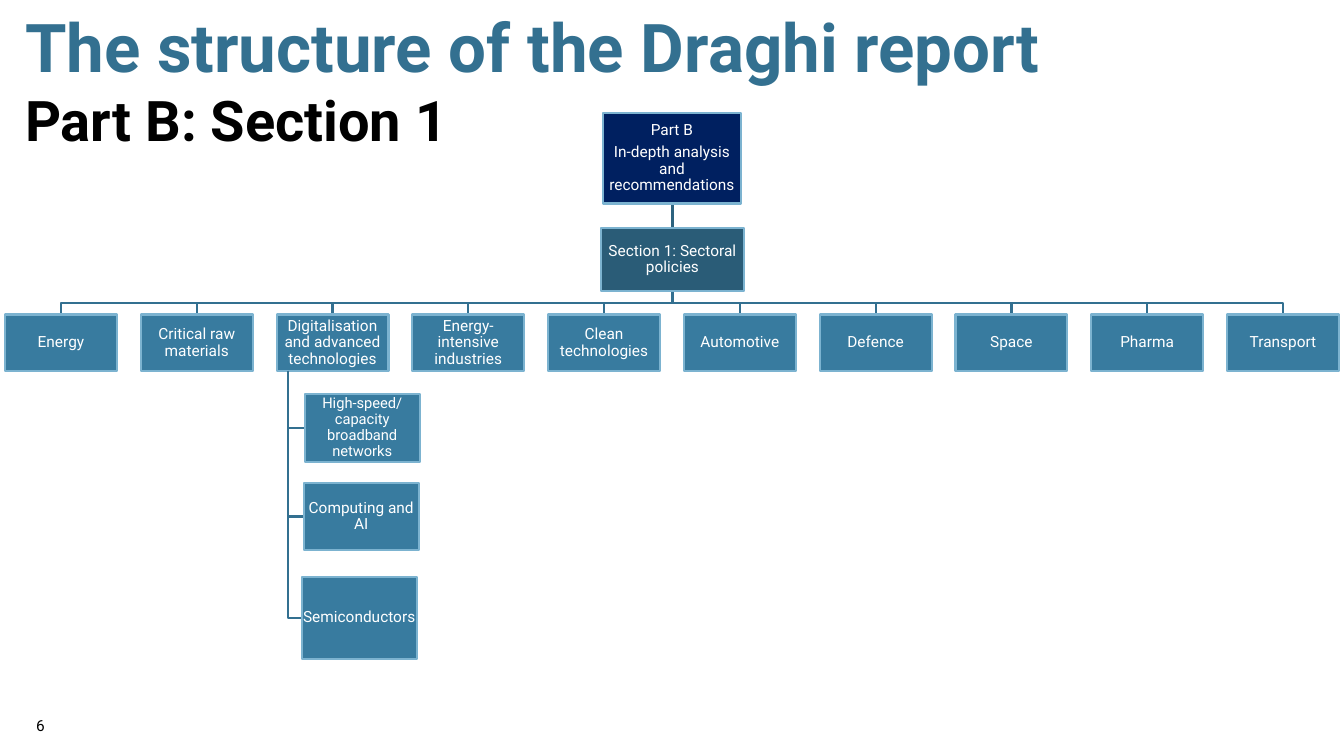
from lxml import etree
from pptx import Presentation, util as u
from pptx.dml.color import RGBColor
from pptx.enum import shapes, text
from pptx.oxml.ns import qn

COLORS = {"title": "337090", "subtitle": "000000", "number": "000000", "label": "FFFFFF",
          "part": "002060", "section": "2A5C77", "sector": "387B9F",
          "border": "7CB3D0", "branch": "337090", "stem": "2D637F"}
FONT = "Roboto"
SECTORS = ["Energy", "Critical raw materials", "Digitalisation and advanced technologies",
           "Energy-intensive industries", "Clean technologies", "Automotive", "Defence",
           "Space", "Pharma", "Transport"]
DIGITAL = 2
TOPICS = [("High-speed/capacity broadband networks", (0.28, 0.79, 1.14, 0.67), 10.5),
          ("Computing and AI", (0.27, 1.67, 1.14, 0.67), 11),
          ("Semiconductors", (0.25, 2.6, 1.14, 0.82), 11)]


def inches(values):
    """Convert lengths in inches to EMU."""
    return [u.Inches(value) for value in values]


def color(name):
    """Look up a named colour."""
    return RGBColor.from_string(COLORS[name])


def assign(target, values):
    """Set every attribute listed in a dict."""
    for name, value in values.items():
        setattr(target, name, value)


def write(frame, lines, frame_format, para_format):
    """Fill a text frame with (text, size, colour, bold) lines."""
    assign(frame, {"word_wrap": True, **frame_format})
    for index, (words, size, tint, bold) in enumerate(lines):
        para = frame.add_paragraph() if index else frame.paragraphs[0]
        assign(para, para_format)
        span = para.add_run()
        span.text = words
        assign(span.font, {"name": FONT, "size": u.Pt(size), "bold": bold})
        span.font.color.rgb = color(tint)


def stroke(line, tint):
    """Give a line the chart's width and a named colour."""
    line.color.rgb = color(tint)
    line.width = u.Pt(1.5)


def node(page, box, fill, labels, size=11):
    """Draw one box of the organisation chart."""
    shape = page.shapes.add_shape(shapes.MSO_SHAPE.RECTANGLE, *inches(box))
    shape.shadow.inherit = False
    shape.fill.solid()
    shape.fill.fore_color.rgb = color(fill)
    stroke(shape.line, "border")
    margins = {f"margin_{side}": u.Inches(0.01) for side in ("left", "right", "top", "bottom")}
    write(shape.text_frame, [(label, size, "label", False) for label in labels],
          {"vertical_anchor": text.MSO_ANCHOR.MIDDLE, **margins},
          {"alignment": text.PP_ALIGN.CENTER, "line_spacing": 0.9, "space_after": u.Pt(3.85)})


def branch(page, points):
    """Draw a bent link through the given points."""
    start, *rest = [inches(point) for point in points]
    builder = page.shapes.build_freeform(*start, scale=1.0)
    builder.add_line_segments(rest, close=False)
    link = builder.convert_to_shape()
    link.shadow.inherit = False
    link.fill.background()
    stroke(link.line, "branch")


def stem(page, middle, top, bottom):
    """Draw the straight link between the two upper boxes."""
    link = page.shapes.add_connector(shapes.MSO_CONNECTOR.STRAIGHT,
                                     *inches((middle, top, middle, bottom)))
    stroke(link.line, "stem")
    etree.SubElement(link._element.spPr, qn("a:effectLst"))


def trunk(page, box):
    """Place the part and its section, linked, in the given box."""
    left, top, width, height = box
    middle = left + width / 2
    stem(page, middle, top + 0.9, top + 1.14)
    node(page, (middle - 0.69, top, 1.37, 0.9), "part",
         ["Part B", "In-depth analysis and recommendations"])
    node(page, (left, top + 1.14, width, height - 1.14), "section",
         ["Section 1: Sectoral policies"])


def topics(page, box):
    """Hang the digital topics under the sector box."""
    left, top, width, height = box
    rail = left + width / 10
    for label, (across, down, wide, high), size in TOPICS:
        middle = top + down + high / 2
        branch(page, [(rail, top + height), (rail, middle), (left + across, middle)])
        node(page, (left + across, top + down, wide, high), "sector", [label], size)


def sectors(page, box, root):
    """Spread the sectors evenly over the box and link them to the root point."""
    left, top, width, height = box
    wide = 1.11
    pitch = (width - wide) / (len(SECTORS) - 1)
    bus = (root[1] + top) / 2
    for index, label in enumerate(SECTORS):
        across = left + index * pitch
        middle = across + wide / 2
        branch(page, [root, (root[0], bus), (middle, bus), (middle, top)])
        node(page, (across, top, wide, height), "sector", [label])
    topics(page, (left + DIGITAL * pitch, top, wide, height))


def words(page, box, lines):
    """Place a plain text box."""
    frame = page.shapes.add_textbox(*inches(box)).text_frame
    write(frame, lines, {}, {})


def main():
    """Build the slide and save it."""
    deck = Presentation()
    assign(deck, {"slide_width": u.Inches(13.33), "slide_height": u.Inches(7.5)})
    page = deck.slides.add_slide(deck.slide_layouts[6])
    words(page, (0.15, 0, 12.28, 1.58),
          [("The structure of the Draghi report", 48, "title", True),
           ("Part B: Section 1", 40, "subtitle", True)])
    sectors(page, (0.05, 3.12, 13.23, 0.56), (6.67, 2.89))
    trunk(page, (5.96, 1.12, 1.42, 1.77))
    words(page, (0.26, 7.06, 0.72, 0.29), [("6", 11, "number", False)])
    deck.save("out.pptx")


if __name__ == "__main__":
    main()
